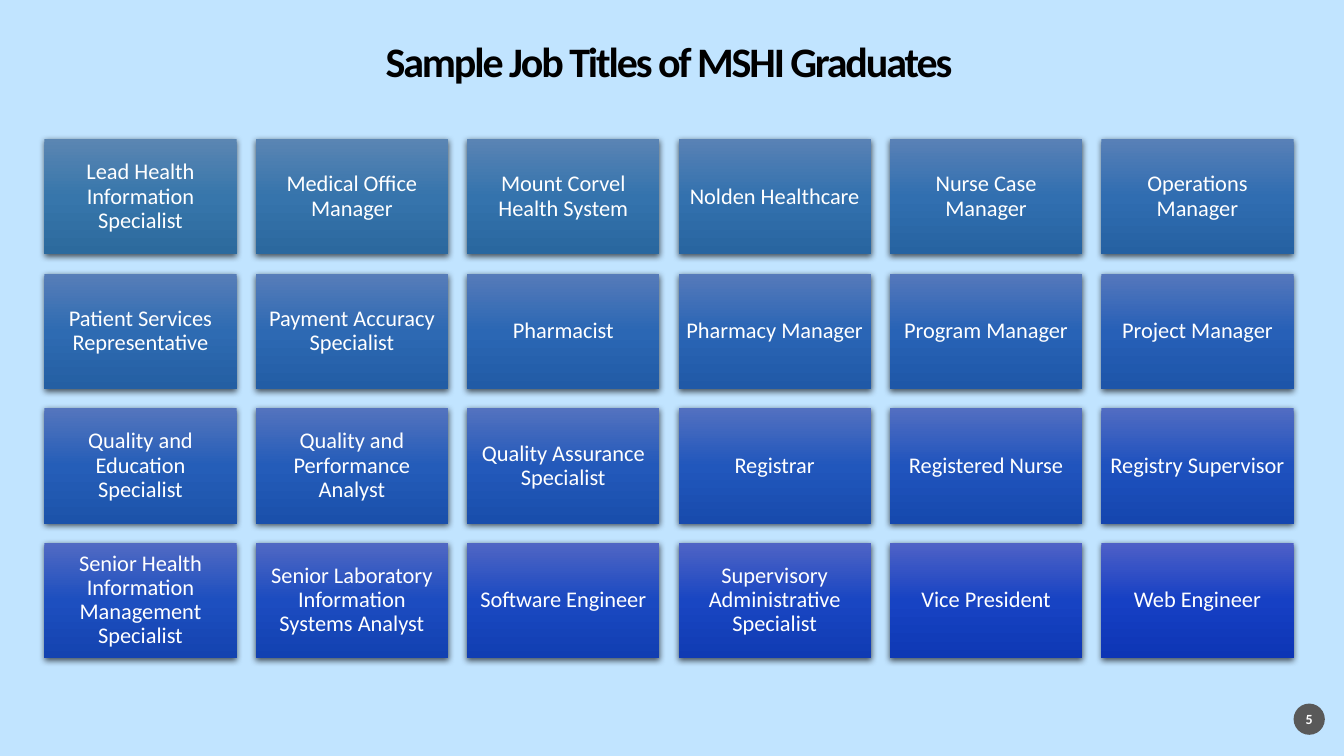
import colorsys
import copy
from dataclasses import dataclass

import pptx
import pptx.util
import pptx.dml.color
import pptx.enum.shapes
import pptx.enum.text
import pptx.oxml
import pptx.oxml.ns

Inches = pptx.util.Inches
Pt = pptx.util.Pt
RGB = pptx.dml.color.RGBColor
Shape = pptx.enum.shapes.MSO_SHAPE

TITLE = "Sample Job Titles of MSHI Graduates"
PAGE = "5"
JOBS = [
    ["Lead Health Information Specialist", "Medical Office Manager",
     "Mount Corvel Health System", "Nolden Healthcare",
     "Nurse Case Manager", "Operations Manager"],
    ["Patient Services Representative", "Payment Accuracy Specialist",
     "Pharmacist", "Pharmacy Manager", "Program Manager", "Project Manager"],
    ["Quality and Education Specialist", "Quality and Performance Analyst",
     "Quality Assurance Specialist", "Registrar",
     "Registered Nurse", "Registry Supervisor"],
    ["Senior Health Information Management Specialist",
     "Senior Laboratory Information Systems Analyst", "Software Engineer",
     "Supervisory Administrative Specialist", "Vice President", "Web Engineer"],
]

# Grid area and gap, in inches
LEFT, TOP, WIDTH, HEIGHT, GAP = 0.44, 1.38, 12.39, 5.15, 0.19


@dataclass
class Theme:
    font: str = "Calibri"
    back: str = "C1E4FF"
    ink: str = "000000"
    white: str = "FFFFFF"
    badge: str = "595959"
    # Top, middle and bottom shade of the first and the last card
    first: tuple = ("5B86B2", "3776AB", "2C6A9D")
    last: tuple = ("4E60C7", "1640C4", "0D35B5")
    head: int = 30
    body: int = 16
    small: int = 10


THEME = Theme()


def blend(start, end, part):
    """Mix two hex colours by hue, lightness and saturation."""
    pair = [colorsys.rgb_to_hls(*(v / 255 for v in RGB.from_string(c)))
            for c in (start, end)]
    mix = [a + (b - a) * part for a, b in zip(*pair)]
    return RGB(*(round(v * 255) for v in colorsys.hls_to_rgb(*mix)))


def write(shape, text, size, color, bold=False, inset=0, lines=1.0):
    frame = shape.text_frame
    frame.text = text
    frame.word_wrap = True
    frame.auto_size = pptx.enum.text.MSO_AUTO_SIZE.NONE
    frame.vertical_anchor = pptx.enum.text.MSO_ANCHOR.MIDDLE
    frame.margin_left = frame.margin_right = Inches(inset)
    frame.margin_top = frame.margin_bottom = Inches(inset)
    para = frame.paragraphs[0]
    para.alignment = pptx.enum.text.PP_ALIGN.CENTER
    para.line_spacing = lines
    font = para.runs[0].font
    font.name, font.size, font.bold = THEME.font, Pt(size), bold
    font.color.rgb = RGB.from_string(color)


def add_title(slide):
    title = slide.shapes.title
    title.left, title.top = Inches(LEFT), Inches(0.4)
    title.width, title.height = Inches(WIDTH), Inches(0.47)
    write(title, TITLE, THEME.head, THEME.ink, bold=True, lines=0.9)
    run = title.text_frame.paragraphs[0].runs[0]
    run.font._element.set("spc", "-150")


def add_shape(slide, kind, *box):
    shape = slide.shapes.add_shape(kind, *map(Inches, box))
    shape.shadow.inherit = False
    shape.line.fill.background()
    return shape


def shade(card, colors):
    """Fill a card from top to bottom with three evenly spaced colours."""
    card.fill.gradient()
    card.fill.gradient_angle = 270
    stops = card.element.spPr.find(".//" + pptx.oxml.ns.qn("a:gsLst"))
    stops.append(copy.deepcopy(stops[0]))
    for i, (stop, color) in enumerate(zip(card.fill.gradient_stops, colors)):
        stop.position = i / 2
        stop.color.rgb = color


def drop_shadow(card):
    effects = card.element.spPr.find(pptx.oxml.ns.qn("a:effectLst"))
    effects.append(pptx.oxml.parse_xml(
        f'<a:outerShdw {pptx.oxml.ns.nsdecls("a")} blurRad="{Pt(4.5)}" '
        f'dist="{Pt(1.5)}" dir="5400000" algn="ctr" rotWithShape="0">'
        '<a:srgbClr val="000000"><a:alpha val="63000"/></a:srgbClr>'
        '</a:outerShdw>'))


def add_cards(slide):
    rows, cols = len(JOBS), len(JOBS[0])
    wide = (WIDTH - GAP * (cols - 1)) / cols
    high = (HEIGHT - GAP * (rows - 1)) / rows
    for row, names in enumerate(JOBS):
        for col, name in enumerate(names):
            card = add_shape(slide, Shape.RECTANGLE,
                             LEFT + col * (wide + GAP),
                             TOP + row * (high + GAP), wide, high)
            part = (row * cols + col) / (rows * cols - 1)
            shade(card, [blend(a, b, part)
                         for a, b in zip(THEME.first, THEME.last)])
            drop_shadow(card)
            write(card, name, THEME.body, THEME.white, inset=0.07, lines=0.9)


def add_badge(slide):
    badge = add_shape(slide, Shape.OVAL, 12.83, 6.98, 0.31, 0.31)
    badge.fill.solid()
    badge.fill.fore_color.rgb = RGB.from_string(THEME.badge)
    write(badge, PAGE, THEME.small, THEME.white, bold=True)


def main():
    deck = pptx.Presentation()
    deck.slide_width, deck.slide_height = Inches(13.33), Inches(7.5)
    slide = deck.slides.add_slide(deck.slide_layouts.get_by_name("Title Only"))
    slide.background.fill.solid()
    slide.background.fill.fore_color.rgb = RGB.from_string(THEME.back)
    add_title(slide)
    add_badge(slide)
    add_cards(slide)
    deck.save("out.pptx")


if __name__ == "__main__":
    main()
